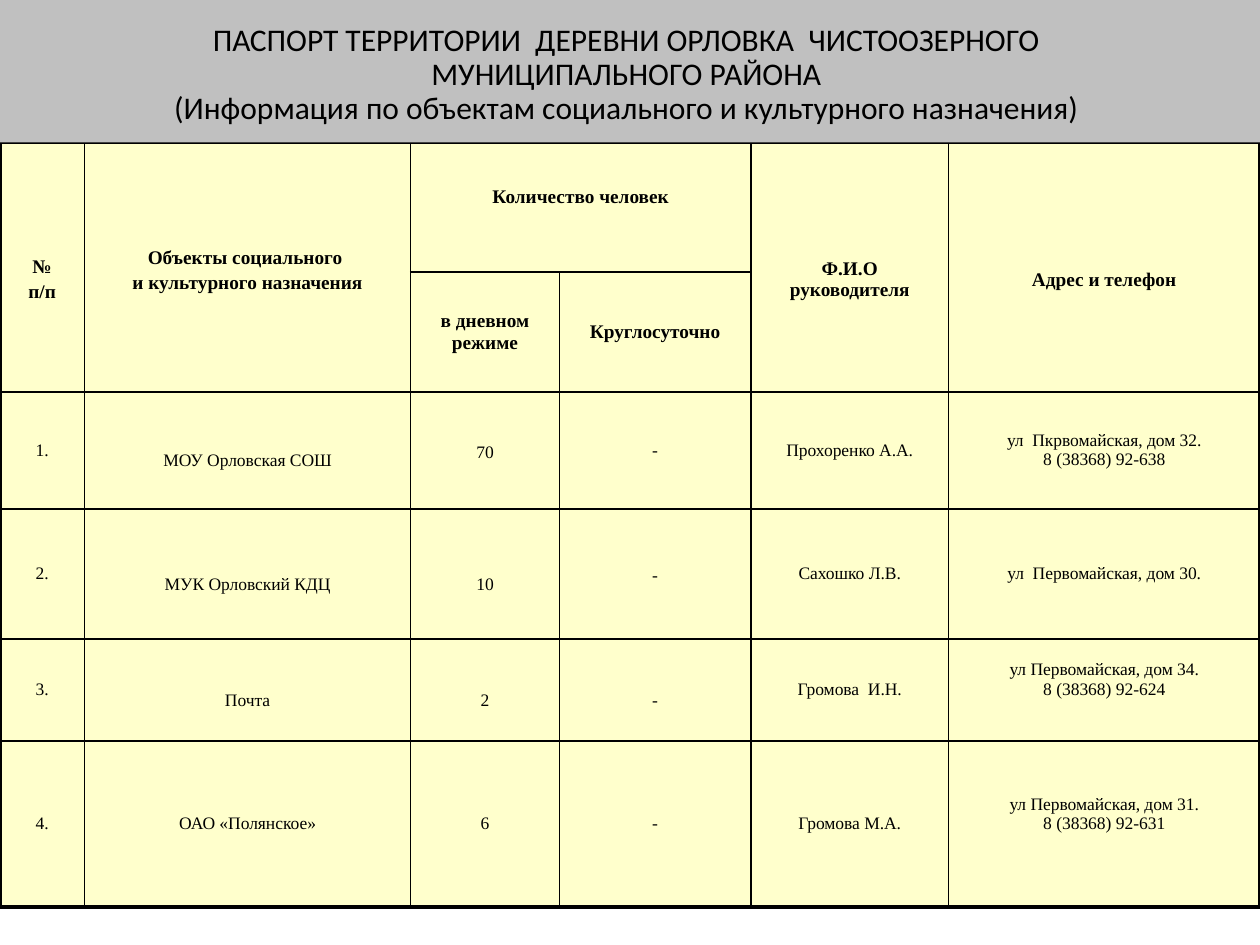
import pptx
import pptx.dml.color
import pptx.enum.shapes
import pptx.enum.text
import pptx.oxml
import pptx.oxml.ns
import pptx.util

Inches = pptx.util.Inches
Pt = pptx.util.Pt
RGBColor = pptx.dml.color.RGBColor
MIDDLE = pptx.enum.text.MSO_ANCHOR.MIDDLE
CENTER = pptx.enum.text.PP_ALIGN.CENTER

BLACK = RGBColor(0x00, 0x00, 0x00)
CREAM = RGBColor(0xFF, 0xFF, 0xCC)
GREY = RGBColor(0xC0, 0xC0, 0xC0)

TITLE_LINES = [
    "ПАСПОРТ ТЕРРИТОРИИ  ДЕРЕВНИ ОРЛОВКА  ЧИСТООЗЕРНОГО ",
    "МУНИЦИПАЛЬНОГО РАЙОНА ",
    "(Информация по объектам социального и культурного назначения) ",
]
COLUMN_WIDTHS = [0.67, 2.59, 1.18, 1.52, 1.57, 2.47]
ROW_HEIGHTS = [1.03, 0.95, 0.93, 1.03, 0.81, 1.32]
HEADER_ROWS = 2
ROWS = [
    ["№\nп/п", "Объекты социального \nи культурного назначения", "Количество человек", "",
     "Ф.И.О руководителя", "Адрес и телефон"],
    ["", "", "в дневном режиме", "Круглосуточно", "", ""],
    ["1.", "МОУ Орловская СОШ", "70", "-", "Прохоренко А.А.",
     "ул  Пкрвомайская, дом 32.\n8 (38368) 92-638"],
    ["2.", "МУК Орловский КДЦ", "10", "-", "Сахошко Л.В.", "ул  Первомайская, дом 30."],
    ["3.", "Почта", "2", "-", "Громова  И.Н.", "ул Первомайская, дом 34.\n8 (38368) 92-624"],
    ["4.", "ОАО «Полянское»", "6", "-", "Громова М.А.",
     "ул Первомайская, дом 31.\n8 (38368) 92-631"],
]
# First and last cell of each merged heading
MERGES = [((0, 0), (1, 0)), ((0, 1), (1, 1)), ((0, 2), (0, 3)), ((0, 4), (1, 4)), ((0, 5), (1, 5))]
# Extra inset that moves text off the middle of its cell
EXTRA_TOP = {
    (0, 0): 0.2, (0, 1): 0.05, (0, 4): 0.2, (0, 5): 0.2,
    (2, 1): 0.17, (2, 2): 0.03,
    (3, 1): 0.17, (3, 2): 0.17, (3, 3): 0.03,
    (4, 1): 0.17, (4, 2): 0.17, (4, 3): 0.17,
}
EXTRA_BOTTOM = {(0, 2): 0.17, (4, 5): 0.16, (5, 5): 0.16}

TITLE_FONT = {"name": "Calibri", "size": Pt(18), "bold": False}
HEADER_FONT = {"name": "Times New Roman", "size": Pt(11), "bold": True}
BODY_FONT = {"name": "Times New Roman", "size": Pt(10), "bold": False}


def write_lines(text_frame, lines, font_format, paragraph_format):
    text_frame.text = "\n".join(lines)
    for number, paragraph in enumerate(text_frame.paragraphs):
        paragraph.alignment = CENTER
        for name, value in paragraph_format.items():
            if number or name != "space_before":
                setattr(paragraph, name, value)
        for run in paragraph.runs:
            for name, value in font_format.items():
                setattr(run.font, name, value)
            run.font.color.rgb = BLACK


def set_borders(cell, widths):
    properties = cell._tc.get_or_add_tcPr()
    for position, (side, width) in enumerate(widths.items()):
        properties.insert(position, pptx.oxml.parse_xml(
            f'<a:{side} {pptx.oxml.ns.nsdecls("a")} w="{Pt(width)}">'
            f'<a:solidFill><a:srgbClr val="{BLACK}"/></a:solidFill></a:{side}>'))


def add_objects_table(slide, left, top, width, height):
    table = slide.shapes.add_table(
        len(ROWS), len(COLUMN_WIDTHS), left, top, width, height).table
    for column, column_width in zip(table.columns, COLUMN_WIDTHS):
        column.width = Inches(column_width)
    for row, row_height in zip(table.rows, ROW_HEIGHTS):
        row.height = Inches(row_height)
    last_row, last_column = len(ROWS) - 1, len(COLUMN_WIDTHS) - 1

    for r, row_texts in enumerate(ROWS):
        for c, cell_text in enumerate(row_texts):
            cell = table.cell(r, c)
            cell.vertical_anchor = MIDDLE
            cell.margin_top = Inches(0.05 + EXTRA_TOP.get((r, c), 0))
            cell.margin_bottom = Inches(0.05 + EXTRA_BOTTOM.get((r, c), 0))
            cell.fill.solid()
            cell.fill.fore_color.rgb = CREAM
            # Thick frame outside, thin rules inside
            set_borders(cell, {
                "lnL": 2.25 if c == 0 else 1,
                "lnR": 2.25 if c == last_column else 1,
                "lnT": 2.25 if r == 0 else 1,
                "lnB": 2.25 if r == last_row else 1,
            })
            is_header = r < HEADER_ROWS
            write_lines(cell.text_frame, cell_text.split("\n"),
                        HEADER_FONT if is_header else BODY_FONT,
                        {"space_before": Pt(2.2 if is_header else 0)})

    for first, last in MERGES:
        table.cell(*first).merge(table.cell(*last))


def add_title_band(slide, left, top, width, height):
    band = slide.shapes.add_shape(
        pptx.enum.shapes.MSO_SHAPE.RECTANGLE, left, top, width, height)
    band.shadow.inherit = False
    band.fill.solid()
    band.fill.fore_color.rgb = GREY
    band.line.fill.background()
    frame_format = {
        "word_wrap": True, "vertical_anchor": MIDDLE,
        "margin_left": Inches(0.04), "margin_right": Inches(0.04),
        "margin_top": Inches(0.08), "margin_bottom": Inches(0.02),
    }
    for name, value in frame_format.items():
        setattr(band.text_frame, name, value)
    write_lines(band.text_frame, TITLE_LINES, TITLE_FONT, {"line_spacing": 0.9})


def main():
    presentation = pptx.Presentation()
    presentation.slide_width = Inches(10)
    presentation.slide_height = Inches(7.5)
    slide = presentation.slides.add_slide(presentation.slide_layouts[6])
    band_height = Inches(1.13)
    add_objects_table(slide, 0, band_height, Inches(10), Inches(sum(ROW_HEIGHTS)))
    add_title_band(slide, 0, 0, Inches(10), band_height)
    presentation.save("out.pptx")


if __name__ == "__main__":
    main()
